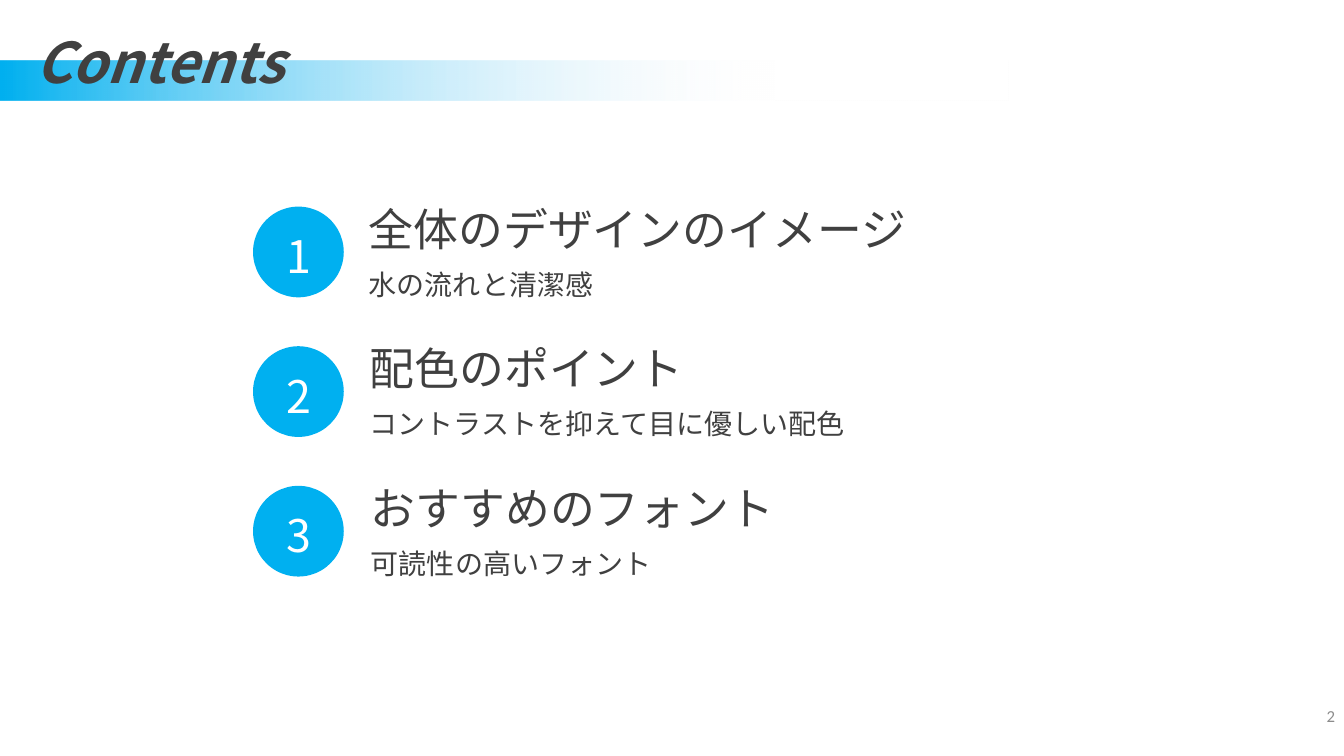
"""Build the contents slide with three numbered topics."""
from dataclasses import dataclass

from lxml.etree import SubElement
from pptx import Presentation
from pptx.dml.color import RGBColor
from pptx.enum.shapes import MSO_SHAPE
from pptx.enum.text import MSO_ANCHOR, MSO_AUTO_SIZE, PP_ALIGN
from pptx.oxml.ns import qn
from pptx.shapes.autoshape import Shape
from pptx.shapes.shapetree import GroupShapes
from pptx.slide import Slide
from pptx.util import Inches, Pt


@dataclass(frozen=True)
class Theme:
    font: str = "Noto Sans CJK JP"
    number_font: str = "Calibri"
    accent: RGBColor = RGBColor(0x00, 0xB0, 0xF0)
    fade: RGBColor = RGBColor(0xF6, 0xF8, 0xFC)
    ink: RGBColor = RGBColor(0x40, 0x40, 0x40)
    muted: RGBColor = RGBColor(0x8C, 0x8C, 0x8C)
    white: RGBColor = RGBColor(0xFF, 0xFF, 0xFF)
    title_size: int = 40
    heading_size: int = 32
    detail_size: int = 20
    page_number_size: int = 12


@dataclass(frozen=True)
class Topic:
    heading: str
    heading_width: float
    detail: str
    detail_width: float


THEME = Theme()
TOPICS = [
    Topic("全体のデザインのイメージ", 5.59, "水の流れと清潔感", 2.45),
    Topic("配色のポイント", 3.34, "コントラストを抑えて目に優しい配色", 4.97),
    Topic("おすすめのフォント", 4.24, "可読性の高いフォント", 3.01),
]
FIRST_TOP, LAST_TOP = 2.05, 4.82
TOPIC_PITCH = (LAST_TOP - FIRST_TOP) / (len(TOPICS) - 1)
TOPIC_LEFT, TOPIC_SHIFT = 3.56, 0.01
TOPIC_LEADING = 38.4


def write(box: Shape, text: str, size: int, color: RGBColor,
          align: PP_ALIGN = PP_ALIGN.LEFT, leading: float | None = None,
          font: str = THEME.font) -> None:
    """Put one formatted line of text into a shape."""
    frame = box.text_frame
    frame.text = text
    frame.word_wrap = False
    frame.auto_size = MSO_AUTO_SIZE.SHAPE_TO_FIT_TEXT
    frame.vertical_anchor = MSO_ANCHOR.TOP
    para = frame.paragraphs[0]
    para.alignment = align
    if leading:
        para.line_spacing = Pt(leading)
    span = para.runs[0]
    span.font.size = Pt(size)
    span.font.color.rgb = color
    span.font.name = font
    SubElement(span.font._element, qn("a:ea"), typeface=font)


def add_title(page: Slide, text: str) -> None:
    """Place and format the title placeholder."""
    title = page.shapes.title
    title.left, title.top = Inches(0.17), Inches(0.22)
    title.width, title.height = Inches(2.83), Inches(0.77)
    write(title, text, THEME.title_size, THEME.ink, PP_ALIGN.CENTER, 48)
    font = title.text_frame.paragraphs[0].runs[0].font
    font.bold = font.italic = True


def add_title_bar(page: Slide) -> None:
    """Add the fading bar behind the title."""
    bar = page.shapes.add_shape(MSO_SHAPE.RECTANGLE, 0, Inches(0.6), Inches(10), Inches(0.4))
    bar.shadow.inherit = False
    bar.line.fill.background()
    bar.fill.gradient()
    bar.fill.gradient_angle = 180
    stops = [(0.23, THEME.fade), (1, THEME.accent)]
    for stop, (position, color) in zip(bar.fill.gradient_stops, stops):
        stop.position = position
        stop.color.rgb = color
    SubElement(bar.element.find(".//" + qn("a:srgbClr")), qn("a:alpha"), val="0")
    page.shapes.title.element.addprevious(bar.element)


def add_line(shapes: GroupShapes, left: float, top: float, width: float, height: float,
             text: str, size: int) -> None:
    """Add one line of topic text."""
    box = shapes.add_textbox(Inches(left), Inches(top), Inches(width), Inches(height))
    write(box, text, size, THEME.ink, leading=TOPIC_LEADING)


def add_topic(page: Slide, index: int, topic: Topic) -> None:
    """Add a numbered circle with its heading and detail as a group."""
    shapes = page.shapes.add_group_shape().shapes
    top = FIRST_TOP + index * TOPIC_PITCH
    left = TOPIC_LEFT + index * TOPIC_SHIFT
    circle = shapes.add_shape(MSO_SHAPE.OVAL, Inches(2.51), Inches(top), Inches(0.9), Inches(0.9))
    circle.shadow.inherit = False
    circle.fill.solid()
    circle.fill.fore_color.rgb = THEME.accent
    circle.line.fill.background()
    number = shapes.add_textbox(Inches(2.72), Inches(top + 0.17), Inches(0.48), Inches(0.64))
    write(number, str(index + 1), THEME.heading_size, THEME.white, PP_ALIGN.CENTER)
    add_line(shapes, left, top - 0.1, topic.heading_width, 0.63, topic.heading, THEME.heading_size)
    add_line(shapes, left, top + 0.35, topic.detail_width, 0.58, topic.detail, THEME.detail_size)


def add_page_number(page: Slide, text: str) -> None:
    """Add the page number in the lower right corner."""
    box = page.shapes.add_textbox(Inches(12.44), Inches(6.9), Inches(0.9), Inches(0.4))
    write(box, text, THEME.page_number_size, THEME.muted, PP_ALIGN.RIGHT, font=THEME.number_font)
    box.text_frame.word_wrap = True
    box.text_frame.auto_size = MSO_AUTO_SIZE.NONE
    box.text_frame.vertical_anchor = MSO_ANCHOR.MIDDLE


def main() -> None:
    """Create and save the deck."""
    deck = Presentation()
    deck.slide_width, deck.slide_height = Inches(13.33), Inches(7.5)
    page = deck.slides.add_slide(deck.slide_layouts[5])
    add_title(page, "Contents")
    add_title_bar(page)
    for index, topic in enumerate(TOPICS):
        add_topic(page, index, topic)
    add_page_number(page, "2")
    deck.save("out.pptx")


if __name__ == "__main__":
    main()
